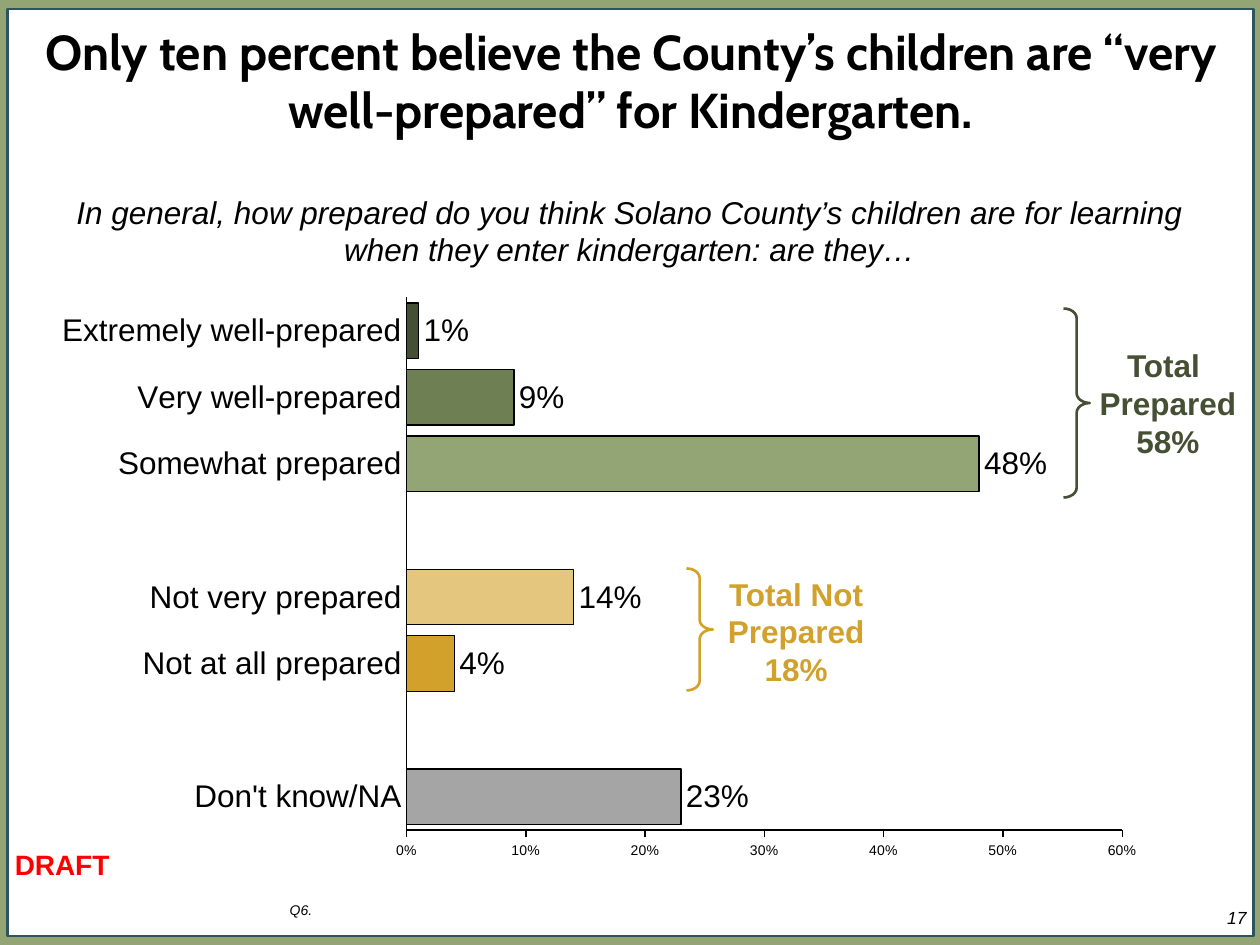
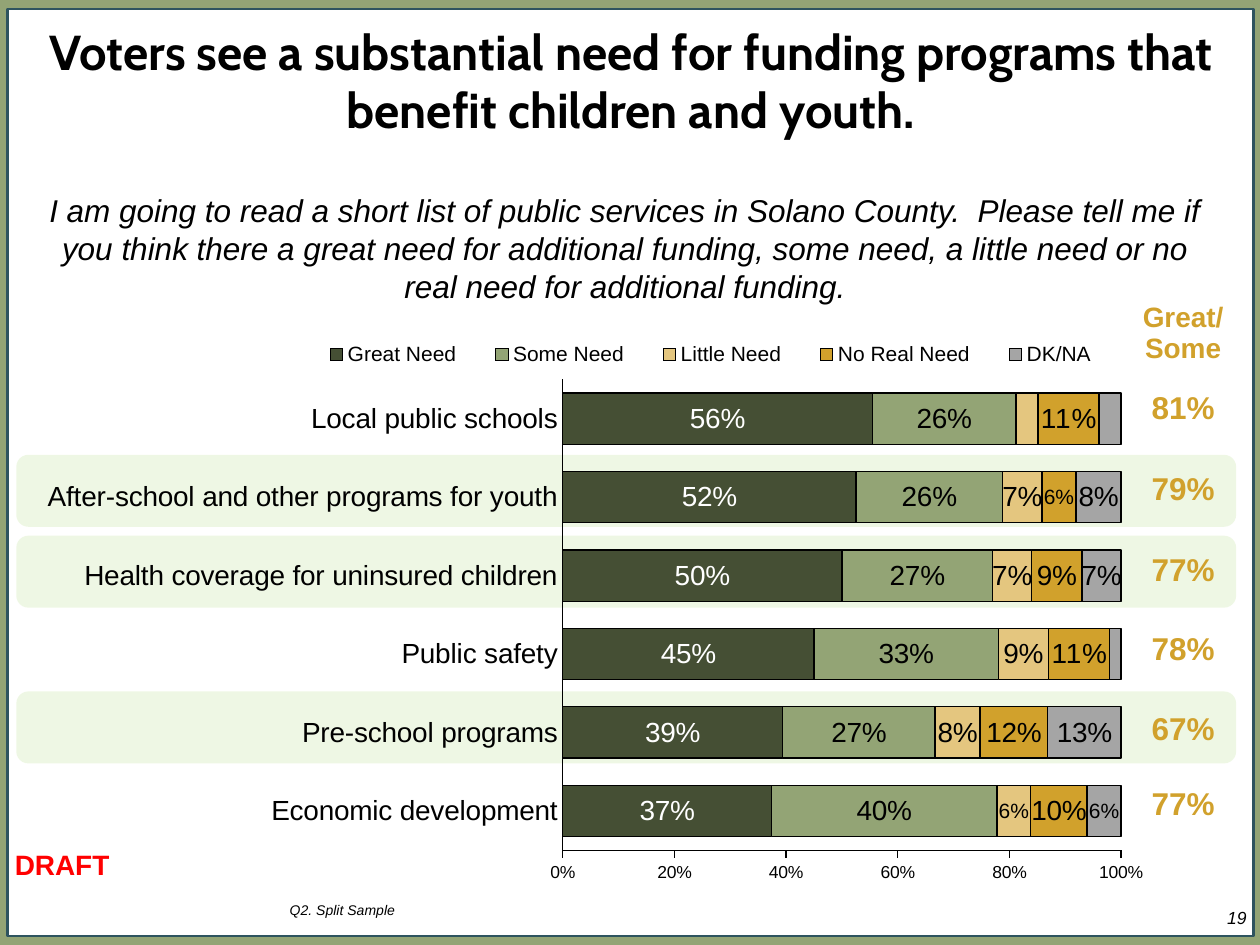
from lxml.etree import SubElement
from pptx import Presentation
from pptx.chart.data import CategoryChartData
from pptx.dml.color import RGBColor
from pptx.enum.chart import (XL_CHART_TYPE, XL_LABEL_POSITION,
                             XL_LEGEND_POSITION, XL_TICK_LABEL_POSITION,
                             XL_TICK_MARK)
from pptx.enum.shapes import MSO_SHAPE
from pptx.enum.text import MSO_ANCHOR, PP_ALIGN
from pptx.oxml.ns import qn
from pptx.util import Cm, Pt

# Shared colours and text styles
BLACK, WHITE, RED, NAVY = "000000", "FFFFFF", "FF0000", "2E545F"
DARK, MOSS, SAGE = "454F34", "6F7F54", "93A475"
SAND, GOLD, GREY, LIME = "E4C67F", "D1A12C", "A5A5A5", "C0E399"

TITLE = dict(size=28, name="Cabin", bold=True)
ASK = dict(size=18, italic=True)
NOTE = dict(size=8, italic=True)
PAGE = dict(size=10, italic=True)
DRAFT = dict(size=16, bold=True, color=RED)
NO_GRID = "{2D5ABB26-0587-4C30-8999-92F81FD0307C}"

# Slide 1: how prepared children are
READY = dict(
    page="17", note="Q6.",
    title="Only ten percent believe the County’s children are “very "
          "well-prepared” for Kindergarten.",
    ask="In general, how prepared do you think Solano County’s children are "
        "for learning when they enter kindergarten: are they…",
    ask_at=(0.64, 3.76, 24.1, 1.8))
LEVELS = [
    ("Extremely well-prepared", 0.01, DARK),
    ("Very well-prepared", 0.09, MOSS),
    ("Somewhat prepared", 0.48, SAGE),
    ("", None, SAND),
    ("Not very prepared", 0.14, SAND),
    ("Not at all prepared", 0.04, GOLD),
    ("", None, GREY),
    ("Don't know/NA", 0.23, GREY),
]
TOTALS = [  # text, colour, brace box, text box
    ("Total \nPrepared\n58%", DARK,
     (21.44, 6.22, 0.53, 3.81), (21.82, 6.86, 3.45, 2.57)),
    ("Total Not Prepared\n18%", GOLD,
     (13.84, 11.46, 0.53, 2.46), (13.84, 11.46, 4.42, 2.57)),
]

# Slide 2: need for funding
NEED = dict(
    page="19", note="Q2. Split Sample",
    title="Voters see a substantial need for funding programs that benefit "
          "children and youth.",
    ask="I am going to read a short list of public services in Solano "
        "County.  Please tell me if you think there a great need for "
        "additional funding, some need, a little need or no real need for "
        "additional funding.",
    ask_at=(0.66, 3.73, 23.88, 2.57))
AREAS = ["Local public schools", "After-school and other programs for youth",
         "Health coverage for uninsured children", "Public safety",
         "Pre-school programs", "Economic development"]
SERIES = [  # name, values, fill, label colour, hidden labels, small labels
    ("Great Need", (0.56, 0.52, 0.5, 0.45, 0.39, 0.37), DARK, WHITE, (), ()),
    ("Some Need", (0.26, 0.26, 0.27, 0.33, 0.27, 0.4), SAGE, BLACK, (), ()),
    ("Little Need", (0.04, 0.07, 0.07, 0.09, 0.08, 0.06), SAND, BLACK,
     (0,), (5,)),
    ("No Real Need", (0.11, 0.06, 0.09, 0.11, 0.12, 0.1), GOLD, BLACK,
     (), (1,)),
    ("DK/NA", (0.04, 0.08, 0.07, 0.02, 0.13, 0.06), GREY, BLACK,
     (0, 3), (5,)),
]
SUMS = ["Great/\nSome", "81%", "79%", "77%", "78%", "67%", "77%"]
ROWS = [1.24, 1.24, 1.63, 1.63, 1.6, 1.6, 1.52]
BANDS = [9.17, 10.8, 13.94]


def rgb(text):
    return RGBColor.from_string(text)


def put(obj, **vals):
    for key, val in vals.items():
        setattr(obj, key, val)


def style(font, size, color=BLACK, name="Arial", bold=False, italic=False):
    put(font, size=Pt(size), name=name, bold=bold, italic=italic)
    font.color.rgb = rgb(color)


def box(at):
    return [Cm(n) for n in at]


def edge(line, color=BLACK, width=0.75):
    line.color.rgb = rgb(color)
    line.width = Pt(width)


def paint(fill, color):
    fill.solid()
    fill.fore_color.rgb = rgb(color)


def write(slide, text, at, look, align=PP_ALIGN.LEFT, anchor=MSO_ANCHOR.TOP):
    frame = slide.shapes.add_textbox(*box(at)).text_frame
    put(frame, word_wrap=True, vertical_anchor=anchor)
    para = frame.paragraphs[0]
    put(para, text=text, alignment=align)
    for run in para.runs:
        style(run.font, **look)


def shape(slide, kind, at, fill=None):
    item = slide.shapes.add_shape(kind, *box(at))
    item.shadow.inherit = False
    if fill:
        paint(item.fill, fill)
    else:
        item.fill.background()
    return item


def start(deck, info):
    """Frame, title, question and footers that every slide has."""
    slide = deck.slides.add_slide(deck.slide_layouts[6])
    paint(slide.background.fill, SAGE)
    panel = shape(slide, MSO_SHAPE.RECTANGLE, (0.15, 0.18, 25.12, 18.69),
                  WHITE)
    edge(panel.line, NAVY, 1.5)
    write(slide, info["page"], (22.71, 18.16, 2.67, 0.69), PAGE,
          PP_ALIGN.RIGHT)
    write(slide, "DRAFT", (0.05, 16.94, 3.43, 0.94), DRAFT,
          anchor=MSO_ANCHOR.BOTTOM)
    write(slide, info["title"], (0.33, 0.3, 24.77, 3.18), TITLE,
          PP_ALIGN.CENTER)
    write(slide, info["ask"], info["ask_at"], ASK, PP_ALIGN.CENTER)
    write(slide, info["note"], (5.59, 17.73, 18.8, 1.22), NOTE,
          anchor=MSO_ANCHOR.MIDDLE)
    return slide


def place(node, spot, index, inner=False):
    """Fix the layout of a plot area or legend as shares of the chart."""
    for old in node.findall(qn("c:layout")):
        node.remove(old)
    layout = SubElement(node, qn("c:layout"))
    node.insert(index, layout)
    manual = SubElement(layout, qn("c:manualLayout"))
    parts = [("layoutTarget", "inner")] if inner else []
    parts += [("xMode", "edge"), ("yMode", "edge"), *zip("xywh", spot)]
    for tag, val in parts:
        SubElement(manual, qn("c:" + tag)).set("val", str(val))


def bars(slide, kind, at, names, rows, plot, gap, top, step, sizes):
    """Horizontal bar chart; sizes are category and value label sizes."""
    data = CategoryChartData(number_format="0%")
    data.categories = names
    for name, vals in rows:
        data.add_series(name, vals)
    chart = slide.shapes.add_chart(kind, *box(at), data).chart
    put(chart, has_title=False, has_legend=False)
    style(chart.font, 18)
    place(chart._chartSpace.chart.plotArea, plot, 0, True)
    put(chart.plots[0], gap_width=gap, vary_by_categories=False)
    cat, val = chart.category_axis, chart.value_axis
    put(cat, reverse_order=True, major_tick_mark=XL_TICK_MARK.NONE)
    put(val, minimum_scale=0, maximum_scale=top, major_unit=step,
        major_tick_mark=XL_TICK_MARK.OUTSIDE)
    put(val.tick_labels, number_format="0%", number_format_is_linked=False)
    # The value axis stays at the bottom, past the last category
    val._element.find(qn("c:crosses")).set("val", "max")
    for axis, size in zip((cat, val), sizes):
        put(axis, has_major_gridlines=False,
            minor_tick_mark=XL_TICK_MARK.NONE,
            tick_label_position=XL_TICK_LABEL_POSITION.NEXT_TO_AXIS)
        edge(axis.format.line)
        style(axis.tick_labels.font, size)
    return chart


def label(series, size, color, position):
    labels = series.data_labels
    put(labels, show_value=True, number_format="0%",
        number_format_is_linked=False, position=position)
    style(labels.font, size, color)


def ready(deck):
    slide = start(deck, READY)
    names, vals, fills = zip(*LEVELS)
    chart = bars(slide, XL_CHART_TYPE.BAR_CLUSTERED,
                 (1.12, 5.87, 22.4, 11.43), names, [("Series 1", vals)],
                 (0.316, 0.011, 0.644, 0.943), 20, 0.6, 0.1, (18, 8))
    series = chart.plots[0].series[0]
    paint(series.format.fill, DARK)
    edge(series.format.line)
    label(series, 18, BLACK, XL_LABEL_POSITION.OUTSIDE_END)
    for i, fill in enumerate(fills):
        look = series.points[i].format
        paint(look.fill, fill)
        edge(look.line)

    # Braces with totals
    for text, color, at, spot in TOTALS:
        brace = shape(slide, MSO_SHAPE.RIGHT_BRACE, at)
        brace.adjustments[0] = 0.367
        edge(brace.line, color, 1.5)
        write(slide, text, spot, dict(size=18, bold=True, color=color),
              PP_ALIGN.CENTER)


def need(deck):
    slide = start(deck, NEED)

    # Bands behind the children's programs
    for top in BANDS:
        band = shape(slide, MSO_SHAPE.ROUNDED_RECTANGLE,
                     (0.33, top, 24.59, 1.45), LIME)
        band.line.fill.background()
        tint = band._element.spPr.find(".//" + qn("a:srgbClr"))
        SubElement(tint, qn("a:alpha")).set("val", "26000")

    # Stacked bars
    chart = bars(slide, XL_CHART_TYPE.BAR_STACKED_100,
                 (0.23, 6.65, 23.11, 11.13), AREAS,
                 [row[:2] for row in SERIES],
                 (0.481, 0.091, 0.487, 0.863), 53, 1, 0.2, (16, 10))
    chart.plots[0].overlap = 100
    for series, row in zip(chart.plots[0].series, SERIES):
        fill, color, gone, small = row[2:]
        paint(series.format.fill, fill)
        edge(series.format.line)
        label(series, 16, color, XL_LABEL_POSITION.CENTER)
        for i in gone + small:
            style(series.points[i].data_label.font, 12, color)
        for mark in series._element.iter(qn("c:dLbl")):
            if int(mark.find(qn("c:idx")).get("val")) in gone:
                mark.find(qn("c:showVal")).set("val", "0")
    chart.has_legend = True
    legend = chart.legend
    put(legend, position=XL_LEGEND_POSITION.TOP, include_in_layout=False)
    style(legend.font, 12)
    place(legend._element, (0.25, 0.01, 0.72, 0.07), 1)

    # Column of sums
    table = slide.shapes.add_table(
        len(SUMS), 1, *box((22.58, 5.97, 2.54, sum(ROWS)))).table
    put(table, first_row=False, horz_banding=False)
    table._tbl.tblPr.find(qn("a:tableStyleId")).text = NO_GRID
    for i, (text, high) in enumerate(zip(SUMS, ROWS)):
        table.rows[i].height = Cm(high)
        cell = table.cell(i, 0)
        cell.fill.background()
        put(cell, vertical_anchor=MSO_ANCHOR.BOTTOM, margin_left=Cm(0.03),
            margin_right=Cm(0.03), margin_top=Cm(0.03), margin_bottom=0)
        para = cell.text_frame.paragraphs[0]
        put(para, text=text, alignment=PP_ALIGN.CENTER)
        for run in para.runs:
            style(run.font, 18 if i else 16, GOLD, bold=True)


def main():
    deck = Presentation()
    put(deck, slide_width=Cm(25.4), slide_height=Cm(19.05))
    ready(deck)
    need(deck)
    deck.save("out.pptx")


if __name__ == "__main__":
    main()
